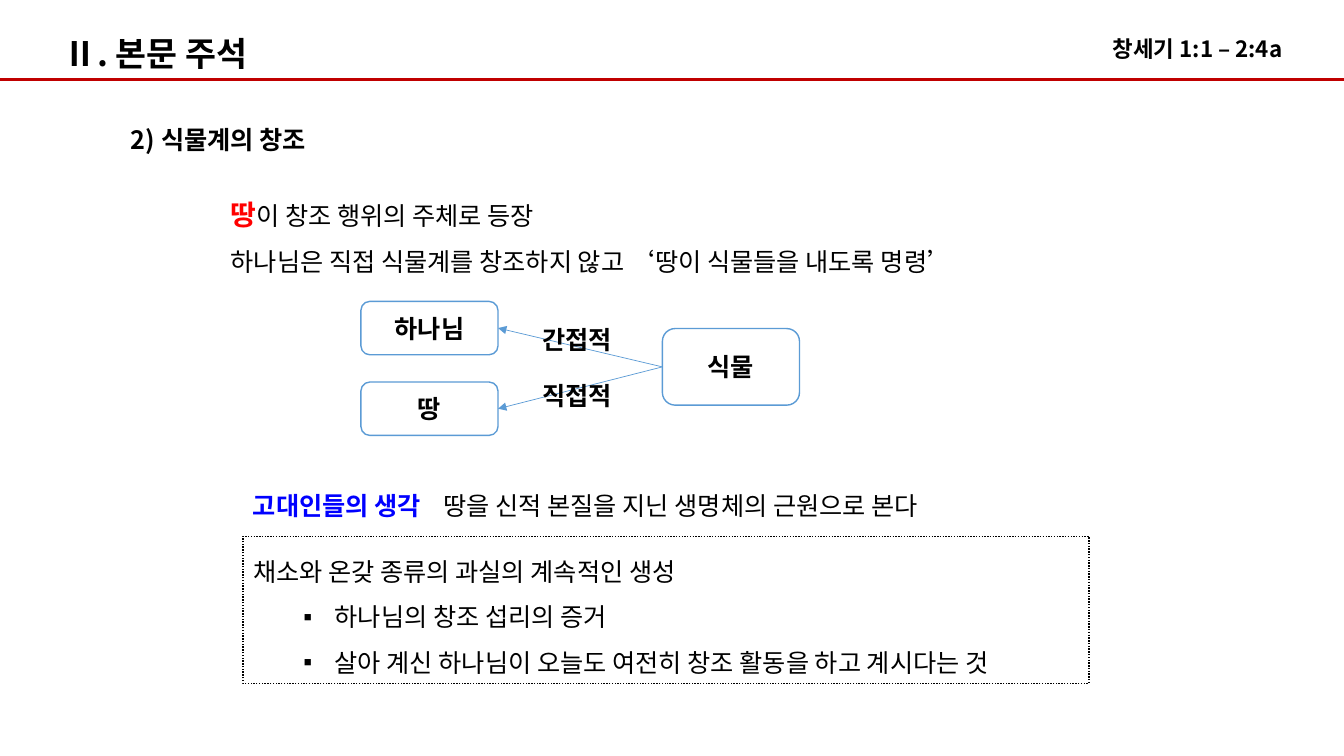
from dataclasses import dataclass

from lxml.etree import SubElement
from pptx import Presentation
from pptx.dml.color import RGBColor
from pptx.enum.dml import MSO_LINE
from pptx.enum.shapes import MSO_CONNECTOR, MSO_SHAPE
from pptx.enum.text import MSO_ANCHOR, MSO_AUTO_SIZE, PP_ALIGN
from pptx.oxml.ns import qn
from pptx.util import Inches, Pt


@dataclass(frozen=True)
class Theme:
    font: str = "Noto Sans CJK KR"
    black: str = "000000"
    white: str = "FFFFFF"
    rule: str = "C00000"
    red: str = "FF0000"
    blue: str = "0000FF"
    edge: str = "5B9BD5"
    head: int = 24
    key: int = 20
    text: int = 18
    note: int = 16


THEME = Theme()


def color(code):
    return RGBColor.from_string(code)


def place(shape, left, top, width, height):
    shape.left, shape.top = Inches(left), Inches(top)
    shape.width, shape.height = Inches(width), Inches(height)


def setup(shape, anchor=MSO_ANCHOR.TOP):
    frame = shape.text_frame
    frame.word_wrap = True
    frame.auto_size = MSO_AUTO_SIZE.NONE
    frame.vertical_anchor = anchor
    return frame


def add_para(frame, first=False, align=PP_ALIGN.LEFT, space=1.0):
    para = frame.paragraphs[0] if first else frame.add_paragraph()
    para.alignment = align
    para.line_spacing = space
    para.space_before = Pt(0)
    return para


def write(para, text, size=THEME.text, tint=THEME.black, bold=False):
    run = para.add_run()
    run.text = text
    font = run.font
    font.size, font.bold, font.name = Pt(size), bold, THEME.font
    font.color.rgb = color(tint)
    SubElement(run._r.get_or_add_rPr(), qn("a:ea"), typeface=THEME.font)


def set_list(para, mark=None, left=0, indent=0):
    props = para._p.get_or_add_pPr()
    props.set("marL", str(Inches(left)))
    props.set("indent", str(Inches(indent)))
    if mark:
        SubElement(props, qn("a:buChar"), char=mark)
    else:
        SubElement(props, qn("a:buNone"))


def set_tab(para, stop):
    tabs = SubElement(para._p.get_or_add_pPr(), qn("a:tabLst"))
    SubElement(tabs, qn("a:tab"), pos=str(Inches(stop)), algn="l")


def add_text(slide, left, top, width, height):
    box = slide.shapes.add_textbox(
        Inches(left), Inches(top), Inches(width), Inches(height))
    return setup(box)


def add_label(slide, text, *area, space=1.0, **style):
    para = add_para(add_text(slide, *area), first=True, space=space)
    write(para, text, bold=True, **style)


def add_node(slide, text, left, top, height):
    node = slide.shapes.add_shape(
        MSO_SHAPE.ROUNDED_RECTANGLE,
        Inches(left), Inches(top), Inches(1.36), Inches(height))
    node.shadow.inherit = False
    node.fill.solid()
    node.fill.fore_color.rgb = color(THEME.white)
    node.line.color.rgb = color(THEME.edge)
    node.line.width = Pt(1)
    frame = setup(node, MSO_ANCHOR.MIDDLE)
    write(add_para(frame, first=True, align=PP_ALIGN.CENTER), text, bold=True)
    return node


def add_line(slide, start, end, tint, width):
    line = slide.shapes.add_connector(
        MSO_CONNECTOR.STRAIGHT, *map(Inches, start + end))
    line.line.color.rgb = color(tint)
    line.line.width = Pt(width)
    SubElement(line._element.spPr, qn("a:effectLst"))
    return line


def add_arrow(slide, source, target):
    arrow = add_line(slide, (0, 0), (1, 1), THEME.edge, 0.5)
    arrow.begin_connect(source, 1)
    arrow.end_connect(target, 3)
    SubElement(arrow.line._get_or_add_ln(), qn("a:tailEnd"), type="triangle")


def fill_title(slide):
    title = slide.shapes.title
    place(title, 0.53, 0.28, 2.21, 0.5)
    para = add_para(setup(title), first=True)
    write(para, "Ⅱ. 본문 주석", size=THEME.head, bold=True)


def fill_body(slide):
    body = slide.placeholders[1]
    place(body, 2.41, 5.32, 8.39, 1.46)
    body.fill.solid()
    body.fill.fore_color.rgb = color(THEME.white)
    body.line.color.rgb = color(THEME.black)
    body.line.width = Pt(1)
    body.line.dash_style = MSO_LINE.ROUND_DOT
    frame = setup(body)
    lead = add_para(frame, first=True, space=1.5)
    set_list(lead)
    write(lead, "채소와 온갖 종류의 과실의 계속적인 생성")
    for text in ("하나님의 창조 섭리의 증거",
                 "살아 계신 하나님이 오늘도 여전히 창조 활동을 하고 계시다는 것"):
        para = add_para(frame, space=1.5)
        para.level = 1
        set_list(para, "▪", 0.81, -0.31)
        write(para, text)


def add_intro(slide):
    frame = add_text(slide, 2.19, 1.74, 8.04, 1.06)
    para = add_para(frame, first=True, space=1.5)
    write(para, "땅", size=THEME.key, tint=THEME.red, bold=True)
    write(para, "이 창조 행위의 주체로 등장")
    write(add_para(frame, space=1.5),
          "하나님은 직접 식물계를 창조하지 않고 ‘땅이 식물들을 내도록 명령’")


def add_chain(slide):
    plant = add_node(slide, "식물", 6.57, 3.26, 0.76)
    for name, top in (("하나님", 2.99), ("땅", 3.79)):
        add_arrow(slide, plant, add_node(slide, name, 3.58, top, 0.53))
    for text, top in (("간접적", 3.17), ("직접적", 3.72)):
        add_label(slide, text, 5.28, top, 0.96, 0.4)


def add_belief(slide):
    para = add_para(add_text(slide, 2.41, 4.82, 7.66, 0.4), first=True)
    set_tab(para, 1.89)
    write(para, "고대인들의 생각", tint=THEME.blue, bold=True)
    write(para, "\t땅을 신적 본질을 지닌 생명체의 근원으로 본다")


def main():
    deck = Presentation()
    deck.slide_width, deck.slide_height = Inches(13.33), Inches(7.5)
    slide = deck.slides.add_slide(deck.slide_layouts[1])
    fill_title(slide)
    fill_body(slide)
    add_label(slide, "창세기 1:1 – 2:4a", 10.94, 0.17, 2.07, 0.5,
              space=1.5, size=THEME.note)
    add_line(slide, (0, 0.79), (13.33, 0.79), THEME.rule, 2.25)
    add_label(slide, "2) 식물계의 창조", 1.2, 1.18, 2.13, 0.4)
    add_intro(slide)
    add_chain(slide)
    add_belief(slide)
    deck.save("out.pptx")


if __name__ == "__main__":
    main()
